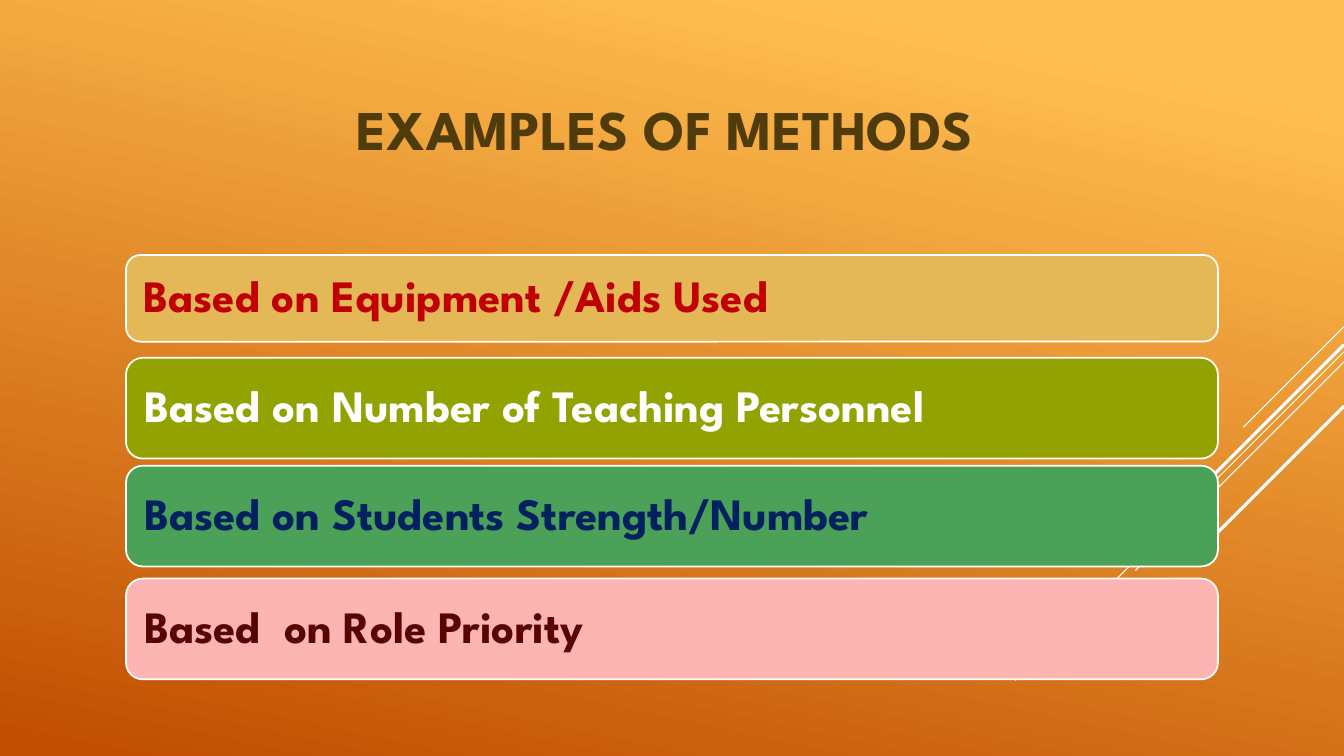
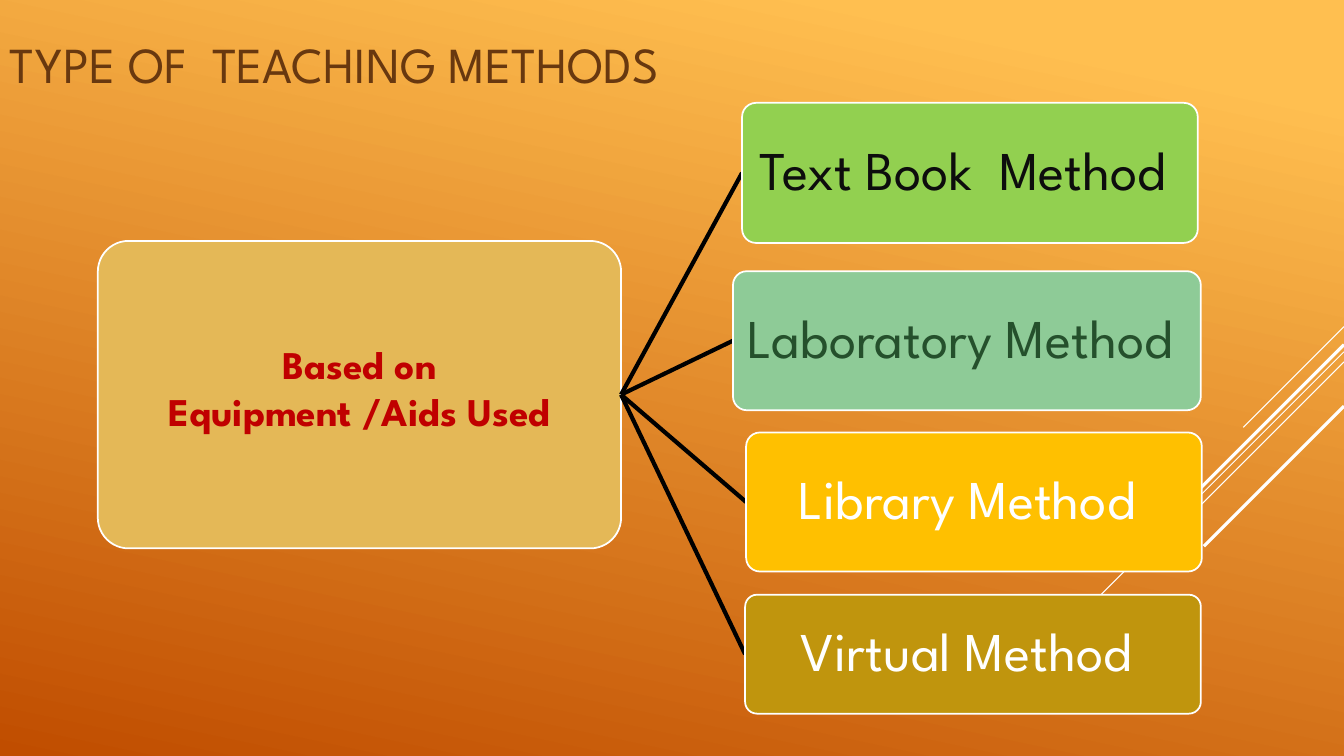
"""Build two slides on teaching methods."""
import dataclasses

import lxml.etree
import pptx
import pptx.dml.color
import pptx.enum.shapes
import pptx.enum.text
import pptx.oxml.ns
import pptx.util

Inches = pptx.util.Inches
ALIGN = pptx.enum.text.PP_ALIGN
ANCHOR = pptx.enum.text.MSO_ANCHOR


@dataclasses.dataclass(frozen=True)
class Theme:
    """Colours, font and type sizes of the deck."""

    font: str = "League Spartan"
    glow: str = "FFBF50"
    ember: str = "C04D00"
    white: str = "FFFFFF"
    black: str = "000000"
    ink: str = "0D0D0D"
    olive_brown: str = "503B0D"
    brown: str = "68380F"
    sand: str = "E4B857"
    red: str = "C00000"
    olive: str = "92A200"
    green: str = "4AA157"
    navy: str = "002060"
    pink: str = "FDB5B3"
    maroon: str = "580502"
    lime: str = "92D050"
    mint: str = "8ECB97"
    forest: str = "25502C"
    amber: str = "FFC000"
    bronze: str = "C0950D"
    title_large: int = 40
    title: int = 36
    band: int = 32
    root: int = 28
    branch: int = 39
    outline: float = 1.25
    link: float = 3
    thin: float = 0.75
    thick: float = 2.25


THEME = Theme()


@dataclasses.dataclass(frozen=True)
class Box:
    """A rectangle in inches."""

    left: float
    top: float
    width: float
    height: float

    def lengths(self):
        """Return the rectangle as slide lengths."""
        return [Inches(value) for value in dataclasses.astuple(self)]

    def inner(self, left, top, width, height):
        """Return a rectangle placed from this one's top left corner."""
        return Box(self.left + left, self.top + top, width, height)


def rgb(value):
    """Turn a hex string into a colour."""
    return pptx.dml.color.RGBColor.from_string(value)


def write(shape, text, *, size, color, bold=False, align=ALIGN.LEFT, anchor=ANCHOR.MIDDLE,
          insets=(0.1, 0.05, 0.1, 0.05), spacing=1.0):
    """Fill a shape with formatted text, one paragraph a line."""
    frame = shape.text_frame
    frame.word_wrap = True
    frame.vertical_anchor = anchor
    (frame.margin_left, frame.margin_top,
     frame.margin_right, frame.margin_bottom) = [Inches(inset) for inset in insets]
    for index, line in enumerate(text.split("\n")):
        para = frame.add_paragraph() if index else frame.paragraphs[0]
        para.alignment = align
        para.line_spacing = spacing
        span = para.add_run()
        span.text = line
        span.font.name = THEME.font
        span.font.size = pptx.util.Pt(size)
        span.font.bold = bold
        span.font.color.rgb = rgb(color)


def add_title(page, box, text, **style):
    """Place a slide title."""
    write(page.shapes.add_textbox(*box.lengths()), text, **style)


def add_card(page, box, fill, corner, text, **style):
    """Place a rounded card with a white outline and text."""
    card = page.shapes.add_shape(
        pptx.enum.shapes.MSO_SHAPE.ROUNDED_RECTANGLE, *box.lengths())
    card.adjustments[0] = corner
    card.shadow.inherit = False
    card.fill.solid()
    card.fill.fore_color.rgb = rgb(fill)
    card.line.color.rgb = rgb(THEME.white)
    card.line.width = pptx.util.Pt(THEME.outline)
    write(card, text, **style)
    return card


def add_line(page, start, end, color, width):
    """Draw a straight line without a shadow."""
    line = page.shapes.add_connector(
        pptx.enum.shapes.MSO_CONNECTOR.STRAIGHT,
        *[Inches(value) for value in (*start, *end)])
    line.line.color.rgb = rgb(color)
    line.line.width = pptx.util.Pt(width)
    properties = line._element.spPr
    lxml.etree.SubElement(properties, pptx.oxml.ns.qn("a:effectLst"))
    return line


def add_page(deck):
    """Add a slide with the gradient and the diagonal lines."""
    page = deck.slides.add_slide(deck.slide_layouts[6])
    fill = page.background.fill
    fill.gradient()
    fill.gradient_angle = 258
    for stop, position, color in zip(
            fill.gradient_stops, (0.1, 1), (THEME.glow, THEME.ember)):
        stop.position = position
        stop.color.rgb = rgb(color)
    edge = 13.33
    for top, run, width in ((3.24, 1, THEME.thin), (3.49, 3.26, THEME.thin),
                            (3.59, 2.07, THEME.thin), (3.42, 1.91, THEME.thick),
                            (4.03, 1.39, THEME.thick)):
        add_line(page, (edge, top), (edge - run, top + run), THEME.white, width)
    return page


def add_bands(page, area):
    """Stack the full-width bands in an area."""
    bands = (
        (0, 0.86, THEME.sand, THEME.red, "Based on Equipment /Aids Used"),
        (1.02, 1, THEME.olive, THEME.white, "Based on Number of Teaching Personnel"),
        (2.09, 1, THEME.green, THEME.navy, "Based on Students Strength/Number"),
        (3.21, 1, THEME.pink, THEME.maroon, "Based  on Role Priority"),
    )
    for top, height, fill, color, text in bands:
        add_card(page, area.inner(0, top, area.width, height), fill, 0.1667, text,
                 size=THEME.band, color=color, bold=True, insets=(0.13,) * 4, spacing=0.9)


def add_tree(page, area):
    """Place the root card and link it to its branches."""
    root = add_card(page, area.inner(0, 1.37, 5.19, 3.05), THEME.sand, 0.1,
                    "Based on\nEquipment /Aids Used", size=THEME.root, color=THEME.red,
                    bold=True, align=ALIGN.CENTER, insets=(0.02, 0.02, 0.02, 0.17))
    branches = (
        (Box(6.39, 0, 4.52, 1.39), THEME.lime, THEME.ink, "Text Book  Method "),
        (Box(6.3, 1.67, 4.64, 1.38), THEME.mint, THEME.forest, "Laboratory Method "),
        (Box(6.43, 3.27, 4.52, 1.38), THEME.amber, THEME.white, "Library Method "),
        (Box(6.42, 4.88, 4.52, 1.18), THEME.bronze, THEME.white, "Virtual Method "),
    )
    for offset, fill, color, text in branches:
        box = area.inner(*dataclasses.astuple(offset))
        link = add_line(page, (area.left, area.top), (box.left, box.top),
                        THEME.black, THEME.link)
        branch = add_card(page, box, fill, 0.1, text, size=THEME.branch, color=color,
                          align=ALIGN.CENTER, insets=(0.03,) * 4, spacing=0.9)
        link.begin_connect(root, 3)
        link.end_connect(branch, 1)


def main():
    """Build and save the deck."""
    deck = pptx.Presentation()
    deck.slide_width, deck.slide_height = Inches(13.33), Inches(7.5)

    page = add_page(deck)
    add_title(page, Box(1.37, 0.89, 10.6, 0.94), "EXAMPLES OF METHODS ",
              size=THEME.title_large, color=THEME.olive_brown, bold=True,
              align=ALIGN.CENTER, anchor=ANCHOR.TOP)
    add_bands(page, Box(1.25, 2.53, 10.83, 4.21))

    page = add_page(deck)
    add_title(page, Box(0, 0.16, 10.83, 0.93), "TYPE OF  TEACHING METHODS",
              size=THEME.title, color=THEME.brown)
    add_tree(page, Box(0.97, 1.02, 10.95, 6.06))

    deck.save("out.pptx")


if __name__ == "__main__":
    main()
